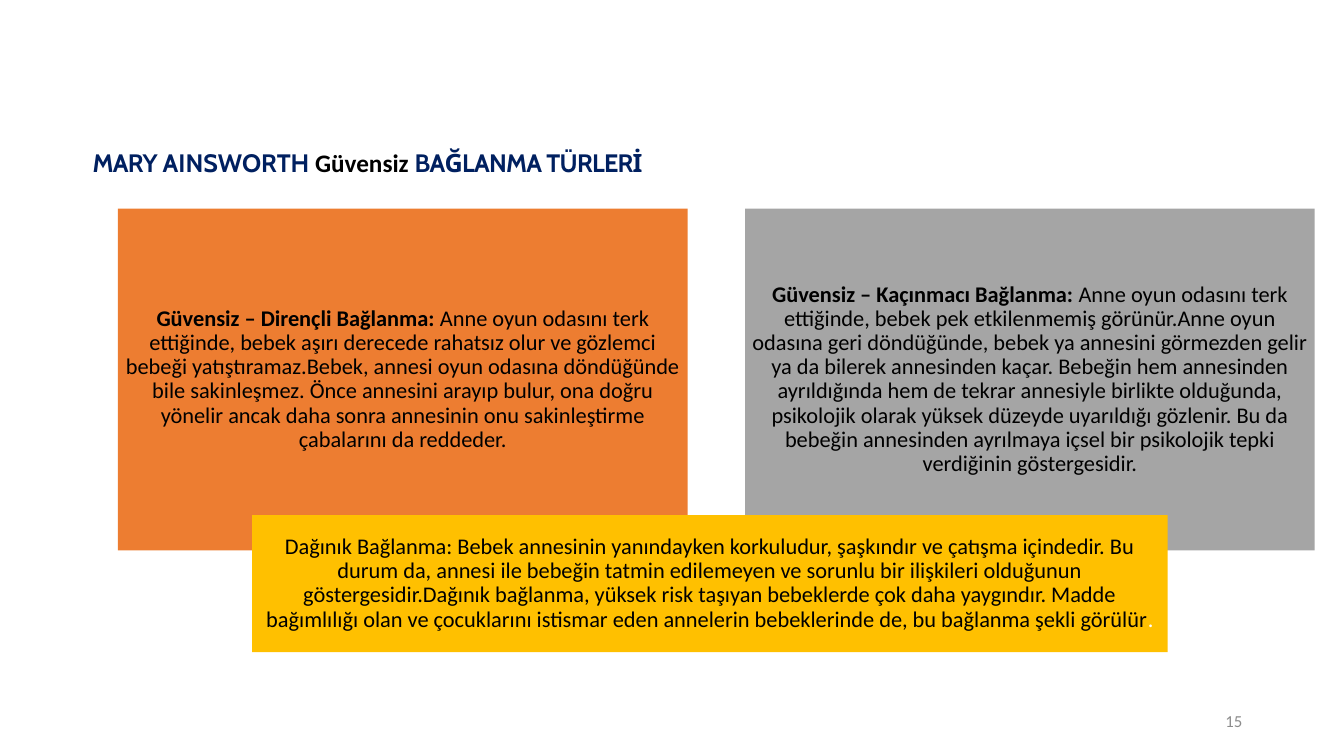
"""Build the slide on insecure attachment types."""
from dataclasses import dataclass

from pptx import Presentation
from pptx import util as u
from pptx.dml.color import RGBColor
from pptx.enum import shapes, text


@dataclass(frozen=True)
class Theme:
    navy: str = "002060"
    black: str = "000000"
    white: str = "FFFFFF"
    grey: str = "8C8C8C"
    resistant: str = "ED7D31"
    avoidant: str = "A5A5A5"
    disorganized: str = "FFC000"
    heading: str = "Cabin"
    body: str = "Calibri"
    title_size: int = 18
    card_size: int = 16
    number_size: int = 12


T = Theme()


def add_run(p, words, size, color, font=T.body, bold=False, spacing=0):
    r = p.add_run()
    r.text = words
    r.font.name = font
    r.font.size = u.Pt(size)
    r.font.bold = bold
    r.font.color.rgb = RGBColor.from_string(color)
    if spacing:
        r.font._element.set("spc", str(int(spacing * 100)))


def add_text_box(s, left, top, width, height):
    tf = s.shapes.add_textbox(*map(u.Inches, (left, top, width, height))).text_frame
    tf.word_wrap = True
    return tf


prs = Presentation()
prs.slide_width, prs.slide_height = u.Inches(13.33), u.Inches(7.5)
s = prs.slides.add_slide(prs.slide_layouts[6])

tf = add_text_box(s, 9.42, 6.95, 3, 0.4)
tf.vertical_anchor = text.MSO_ANCHOR.MIDDLE
p = tf.paragraphs[0]
p.alignment = text.PP_ALIGN.RIGHT
add_run(p, "15", T.number_size, T.grey)

tf = add_text_box(s, 0.82, 1.41, 8.87, 0.4)
tf.auto_size = text.MSO_AUTO_SIZE.SHAPE_TO_FIT_TEXT
p = tf.paragraphs[0]
for words, color, font, spacing in (
    ("MARY ", T.navy, T.heading, -0.5),
    ("AINSWORTH ", T.navy, T.heading, 0),
    ("Güvensiz ", T.black, T.body, 0),
    ("BAĞLANMA TÜRLERİ", T.navy, T.heading, -0.5),
):
    add_run(p, words, T.title_size, color, font, True, spacing)

cards = (
    ((1.17, 2.07, 5.65, 3.39), T.resistant, (
        ("Güvensiz – Dirençli Bağlanma: ", T.black, True),
        ("Anne oyun odasını terk ettiğinde, bebek aşırı derecede rahatsız olur ve "
         "gözlemci bebeği yatıştıramaz.Bebek, annesi oyun odasına döndüğünde bile "
         "sakinleşmez. Önce annesini arayıp bulur, ona doğru yönelir ancak daha sonra "
         "annesinin onu sakinleştirme çabalarını da reddeder.", T.black, False),
    )),
    ((7.39, 2.07, 5.65, 3.39), T.avoidant, (
        ("Güvensiz – Kaçınmacı Bağlanma: ", T.black, True),
        ("Anne oyun odasını terk ettiğinde, bebek pek etkilenmemiş görünür.Anne oyun "
         "odasına geri döndüğünde, bebek ya annesini görmezden gelir ya da bilerek "
         "annesinden kaçar. Bebeğin hem annesinden ayrıldığında hem de tekrar annesiyle "
         "birlikte olduğunda, psikolojik olarak yüksek düzeyde uyarıldığı gözlenir. Bu da "
         "bebeğin annesinden ayrılmaya içsel bir psikolojik tepki verdiğinin "
         "göstergesidir.", T.black, False),
    )),
    ((2.5, 5.11, 9.08, 1.36), T.disorganized, (
        ("Dağınık Bağlanma: Bebek annesinin yanındayken korkuludur, şaşkındır ve çatışma "
         "içindedir. Bu durum da, annesi ile bebeğin tatmin edilemeyen ve sorunlu bir "
         "ilişkileri olduğunun göstergesidir.Dağınık bağlanma, yüksek risk taşıyan "
         "bebeklerde çok daha yaygındır. Madde bağımlılığı olan ve çocuklarını istismar "
         "eden annelerin bebeklerinde de, bu bağlanma şekli görülür", T.black, False),
        (".", T.white, False),
    )),
)
for box, fill, runs in cards:
    sp = s.shapes.add_shape(shapes.MSO_SHAPE.RECTANGLE, *map(u.Inches, box))
    sp.shadow.inherit = False
    sp.fill.solid()
    sp.fill.fore_color.rgb = RGBColor.from_string(fill)
    sp.line.fill.background()
    tf = sp.text_frame
    tf.word_wrap = True
    tf.vertical_anchor = text.MSO_ANCHOR.MIDDLE
    tf.margin_left = tf.margin_right = tf.margin_top = tf.margin_bottom = u.Inches(0.07)
    p = tf.paragraphs[0]
    p.alignment = text.PP_ALIGN.CENTER
    p.line_spacing = 0.9
    for words, color, bold in runs:
        add_run(p, words, T.card_size, color, bold=bold)

prs.save("out.pptx")
